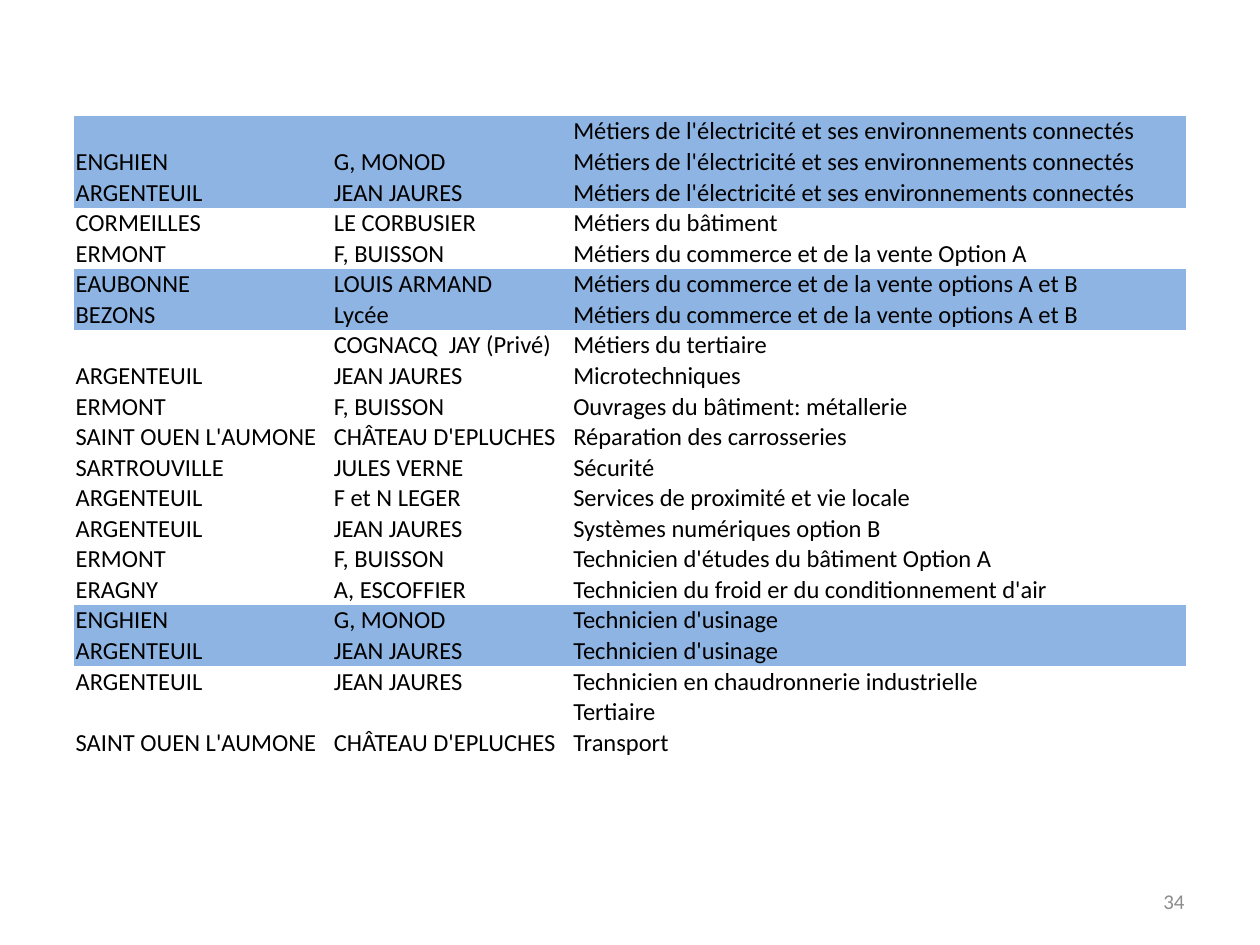
from lxml import etree
from pptx import Presentation
from pptx.dml.color import RGBColor
from pptx.enum.text import MSO_ANCHOR, PP_ALIGN
from pptx.oxml.ns import qn
from pptx.util import Inches, Pt

BOTTOM, MIDDLE = MSO_ANCHOR.BOTTOM, MSO_ANCHOR.MIDDLE
RIGHT = PP_ALIGN.RIGHT

FONT = "Calibri"
COLORS = {"band": "8EB4E3", "text": "000000", "number": "8C8C8C"}
PAGE = "34"

# town, school, trade
ROWS = [
    ("", "", "Métiers de l'électricité et ses environnements connectés"),
    ("ENGHIEN", "G, MONOD", "Métiers de l'électricité et ses environnements connectés"),
    ("ARGENTEUIL", "JEAN JAURES", "Métiers de l'électricité et ses environnements connectés"),
    ("CORMEILLES", "LE CORBUSIER", "Métiers du bâtiment"),
    ("ERMONT", "F, BUISSON", "Métiers du commerce et de la vente Option A"),
    ("EAUBONNE", "LOUIS ARMAND", "Métiers du commerce et de la vente options A et B"),
    ("BEZONS", "Lycée", "Métiers du commerce et de la vente options A et B"),
    ("", "COGNACQ  JAY (Privé)", "Métiers du tertiaire"),
    ("ARGENTEUIL", "JEAN JAURES", "Microtechniques"),
    ("ERMONT", "F, BUISSON", "Ouvrages du bâtiment: métallerie"),
    ("SAINT OUEN L'AUMONE", "CHÂTEAU D'EPLUCHES", "Réparation des carrosseries"),
    ("SARTROUVILLE", "JULES VERNE", "Sécurité"),
    ("ARGENTEUIL", "F et N LEGER", "Services de proximité et vie locale"),
    ("ARGENTEUIL", "JEAN JAURES", "Systèmes numériques option B"),
    ("ERMONT", "F, BUISSON", "Technicien d'études du bâtiment Option A"),
    ("ERAGNY", "A, ESCOFFIER", "Technicien du froid er du conditionnement d'air"),
    ("ENGHIEN", "G, MONOD", "Technicien d'usinage"),
    ("ARGENTEUIL", "JEAN JAURES", "Technicien d'usinage"),
    ("ARGENTEUIL", "JEAN JAURES", "Technicien en chaudronnerie industrielle"),
    ("", "", "Tertiaire"),
    ("SAINT OUEN L'AUMONE", "CHÂTEAU D'EPLUCHES", "Transport"),
    ("", "", ""),
]
BANDED_ROWS = {0, 1, 2, 5, 6, 16, 17}

COL_WIDTHS = (2.05, 1.9, 4.87)
ROW_HEIGHT = 0.24
TABLE_LEFT, TABLE_TOP = 0.59, 0.92
TEXT_SIZE, NUMBER_SIZE = 14, 12


def rgb(name):
    return RGBColor.from_string(COLORS[name])


def add_run(p, text, size, color):
    r = p.add_run()
    r.text = text
    r.font.name = FONT
    r.font.size = Pt(size)
    r.font.color.rgb = rgb(color)


def fill_cell(cell, text, banded):
    cell.vertical_anchor = BOTTOM
    cell.margin_left = cell.margin_right = Inches(0.01)
    cell.margin_top, cell.margin_bottom = Pt(0.4), 0
    if banded:
        cell.fill.solid()
        cell.fill.fore_color.rgb = rgb("band")
    else:
        cell.fill.background()
    p = cell.text_frame.paragraphs[0]
    if text:
        add_run(p, text, TEXT_SIZE, "text")
    else:
        # An empty cell takes its line height from the paragraph end mark
        end = etree.SubElement(p._p, qn("a:endParaRPr"), sz=str(TEXT_SIZE * 100))
        etree.SubElement(end, qn("a:latin"), typeface=FONT)


def add_school_table(slide):
    table = slide.shapes.add_table(
        len(ROWS), len(COL_WIDTHS), Inches(TABLE_LEFT), Inches(TABLE_TOP),
        Inches(sum(COL_WIDTHS)), Inches(ROW_HEIGHT * len(ROWS))).table
    table.first_row = table.horz_banding = False
    # "No style, no grid"
    table._tbl.tblPr.find(qn("a:tableStyleId")).text = "{2D5ABB26-0587-4C30-8999-92F81FD0307C}"
    for col, width in zip(table.columns, COL_WIDTHS):
        col.width = Inches(width)
    for i, row in enumerate(ROWS):
        table.rows[i].height = Inches(ROW_HEIGHT)
        for j, text in enumerate(row):
            fill_cell(table.cell(i, j), text, i in BANDED_ROWS)


def add_page_number(slide):
    tf = slide.shapes.add_textbox(
        Inches(7.17), Inches(6.95), Inches(2.33), Inches(0.4)).text_frame
    tf.word_wrap = True
    tf.vertical_anchor = MIDDLE
    p = tf.paragraphs[0]
    p.alignment = RIGHT
    add_run(p, PAGE, NUMBER_SIZE, "number")


def main():
    prs = Presentation()
    prs.slide_width, prs.slide_height = Inches(10), Inches(7.5)
    slide = prs.slides.add_slide(prs.slide_layouts[6])
    add_school_table(slide)
    add_page_number(slide)
    prs.save("out.pptx")


if __name__ == "__main__":
    main()
